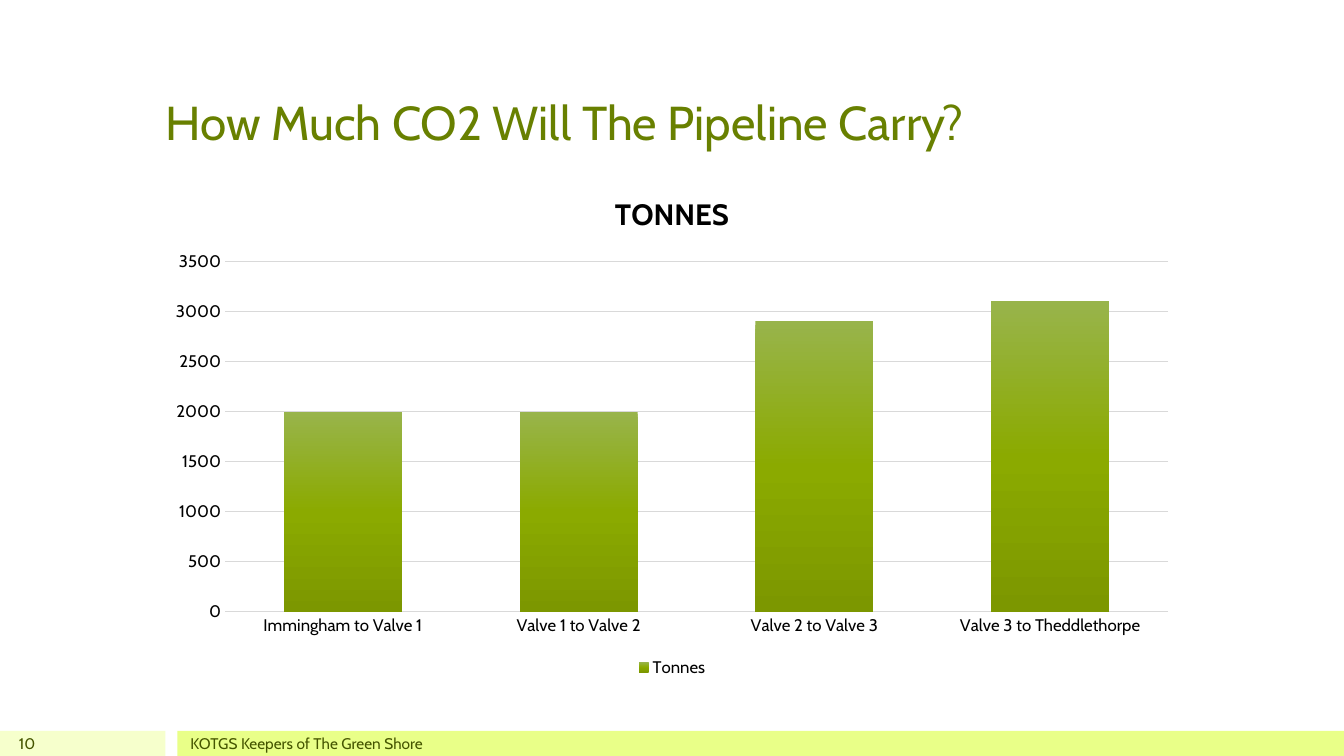
from copy import deepcopy

from pptx import Presentation
from pptx.chart.data import CategoryChartData
from pptx.dml.color import RGBColor
from pptx.enum.chart import XL_CHART_TYPE as ChartType
from pptx.enum.chart import XL_LEGEND_POSITION as LegendPosition
from pptx.enum.chart import XL_TICK_MARK as TickMark
from pptx.enum.shapes import MSO_SHAPE as Shape
from pptx.enum.text import MSO_ANCHOR as Anchor
from pptx.enum.text import MSO_AUTO_SIZE as AutoSize
from pptx.enum.text import PP_ALIGN as Align
from pptx.oxml.ns import qn
from pptx.util import Inches, Pt

FONT = "Cabin"
TITLE_GREEN = RGBColor(0x68, 0x80, 0x00)
FOOTER_GREEN = RGBColor(0x45, 0x55, 0x00)
PALE_LIME = RGBColor(0xF6, 0xFF, 0xCC)
LIME = RGBColor(0xE9, 0xFF, 0x88)
BLACK = RGBColor(0x00, 0x00, 0x00)
GRID_GREY = RGBColor(0xD9, 0xD9, 0xD9)
BAR_GRADIENT = [
    (0, RGBColor(0x98, 0xB4, 0x4B)),
    (0.5, RGBColor(0x8B, 0xAA, 0x00)),
    (1, RGBColor(0x7C, 0x97, 0x00)),
]

CONTENT_LEFT, CONTENT_WIDTH = Inches(1.54), Inches(10.25)
FOOTER_TOP, FOOTER_HEIGHT = Inches(7.25), Inches(0.25)
TONNES = {
    "Immingham to Valve 1": 2000,
    "Valve 1 to Valve 2": 2000,
    "Valve 2 to Valve 3": 2900,
    "Valve 3 to Theddlethorpe": 3100,
}


def style_font(font, size, color, bold=False):
    """Apply the slide's typeface with a size and colour."""
    font.name = FONT
    font.size = Pt(size)
    font.bold = bold
    font.color.rgb = color


def style_line(line):
    """Draw a thin grey chart line."""
    line.color.rgb = GRID_GREY
    line.width = Pt(0.75)


def write_text(frame, text, size, color, anchor, align=Align.LEFT):
    """Fill a text frame with one formatted paragraph."""
    frame.text = text
    frame.word_wrap = True
    frame.auto_size = AutoSize.NONE
    frame.vertical_anchor = anchor
    paragraph = frame.paragraphs[0]
    paragraph.alignment = align
    style_font(paragraph.runs[0].font, size, color)


def add_title(slide, text):
    """Place and format the title placeholder."""
    title = slide.shapes.title
    title.left, title.top = CONTENT_LEFT, Inches(0.25)
    title.width, title.height = CONTENT_WIDTH, Inches(1.29)
    write_text(title.text_frame, text, 34, TITLE_GREEN, Anchor.BOTTOM)


def add_footer_band(slide, left, width, color):
    """Add a plain colour band along the bottom edge."""
    band = slide.shapes.add_shape(
        Shape.RECTANGLE, Inches(left), FOOTER_TOP, Inches(width), FOOTER_HEIGHT)
    band.shadow.inherit = False
    band.fill.solid()
    band.fill.fore_color.rgb = color
    band.line.fill.background()


def add_footer_text(slide, left, width, text, align):
    """Add small text over a footer band."""
    footer = slide.shapes.add_textbox(
        Inches(left), FOOTER_TOP, Inches(width), FOOTER_HEIGHT)
    write_text(footer.text_frame, text, 11, FOOTER_GREEN, Anchor.MIDDLE, align)


def fill_bars(series):
    """Shade the bars with a three-stop vertical gradient."""
    fill = series.format.fill
    fill.gradient()
    fill.gradient_angle = 270
    stop_list = series._element.find(".//" + qn("a:gsLst"))
    stop_list.append(deepcopy(stop_list[-1]))
    for stop, (position, color) in zip(fill.gradient_stops, BAR_GRADIENT):
        stop.position = position
        stop.color.rgb = color


def style_axes(chart):
    """Format the category and value axes."""
    for axis in (chart.category_axis, chart.value_axis):
        axis.major_tick_mark = axis.minor_tick_mark = TickMark.NONE
        style_font(axis.tick_labels.font, 12, BLACK)
    style_line(chart.category_axis.format.line)
    tonnes_axis = chart.value_axis
    tonnes_axis.minimum_scale, tonnes_axis.maximum_scale = 0, 3500
    tonnes_axis.major_unit = 500
    tonnes_axis.format.line.fill.background()
    style_line(tonnes_axis.major_gridlines.format.line)


def add_tonnes_chart(slide):
    """Add the column chart of tonnes per pipeline section."""
    chart_data = CategoryChartData()
    chart_data.categories = list(TONNES)
    chart_data.add_series("Tonnes", list(TONNES.values()))
    chart = slide.shapes.add_chart(
        ChartType.COLUMN_STACKED, CONTENT_LEFT, Inches(1.71),
        CONTENT_WIDTH, Inches(5.05), chart_data).chart
    style_font(chart.font, 10, BLACK)

    chart.has_title = True
    heading = chart.chart_title.text_frame
    heading.text = "TONNES"
    style_font(heading.paragraphs[0].runs[0].font, 21, BLACK, bold=True)
    chart.chart_title.include_in_layout = False

    chart.has_legend = True
    chart.legend.position = LegendPosition.BOTTOM
    chart.legend.include_in_layout = False
    style_font(chart.legend.font, 12, BLACK)

    style_axes(chart)
    columns = chart.plots[0]
    columns.vary_by_categories = False
    columns.gap_width = columns.overlap = 100
    fill_bars(columns.series[0])


def main():
    """Build the slide and save it."""
    deck = Presentation()
    deck.slide_width, deck.slide_height = Inches(13.33), Inches(7.5)
    slide = deck.slides.add_slide(deck.slide_layouts.get_by_name("Title Only"))
    add_footer_band(slide, 0, 1.64, PALE_LIME)
    add_footer_band(slide, 1.76, 11.57, LIME)
    add_title(slide, "How Much CO2 Will The Pipeline Carry?")
    add_footer_text(slide, 0, 0.45, "10", Align.RIGHT)
    add_footer_text(slide, 1.79, 10, "KOTGS Keepers of The Green Shore", Align.LEFT)
    add_tonnes_chart(slide)
    deck.save("out.pptx")


if __name__ == "__main__":
    main()
